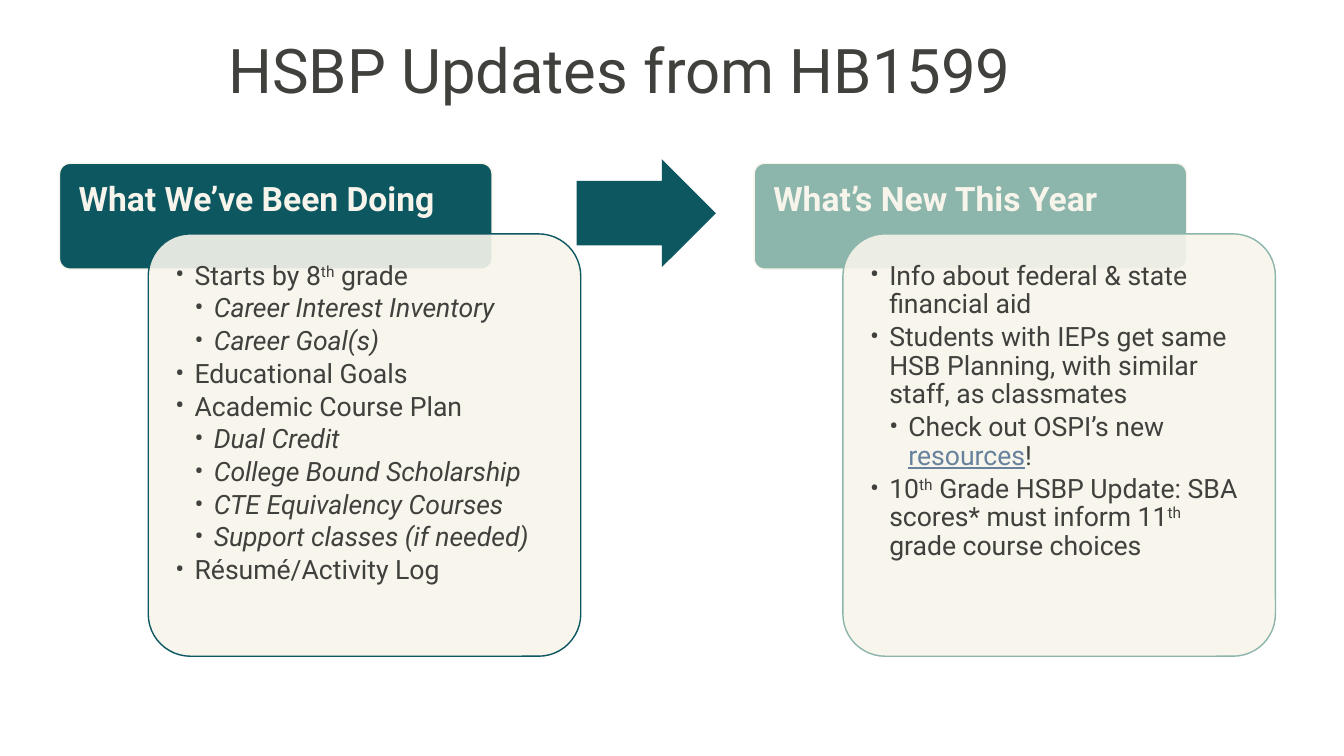
from dataclasses import dataclass

from lxml import etree
from pptx import Presentation
from pptx import util as u
from pptx.dml import color
from pptx.enum import shapes, text
from pptx.oxml import ns

FONT = "Roboto"
HUES = {"teal": "0D5761", "sage": "8CB5AB", "cream": "F7F5EB",
        "ink": "40403D", "link": "68829E"}
STEP = 0.19  # list indent per level


@dataclass
class Run:
    txt: str
    sup: bool = False
    link: bool = False


@dataclass
class Item:
    runs: list[Run]
    level: int = 1
    slant: bool = False


@dataclass
class Panel:
    left: float
    hue: str
    head: str
    head_id: int
    list_id: int
    items: list[Item]


def main_item(txt: str) -> Item:
    return Item([Run(txt)])


def sub_item(txt: str) -> Item:
    return Item([Run(txt)], 2, True)


TH = Run("th", sup=True)
PANELS = [
    Panel(0.59, "teal", "What We’ve Been Doing", 1, 2, [
        Item([Run("Starts by 8"), TH, Run(" grade")]),
        sub_item("Career Interest Inventory"),
        sub_item("Career Goal(s)"),
        main_item("Educational Goals"),
        main_item("Academic Course Plan"),
        sub_item("Dual Credit"),
        sub_item("College Bound Scholarship"),
        sub_item("CTE Equivalency Courses"),
        sub_item("Support classes (if needed)"),
        main_item("Résumé/Activity Log"),
    ]),
    Panel(7.48, "sage", "What’s New This Year", 3, 4, [
        main_item("Info about federal & state financial aid"),
        main_item("Students with IEPs get same HSB Planning, "
                  "with similar staff, as classmates"),
        Item([Run("Check out OSPI’s new "), Run("resources", link=True),
              Run("!")], 2),
        Item([Run("10"), TH,
              Run(" Grade HSBP Update: SBA scores* must inform 11"), TH,
              Run(" grade course choices")]),
    ]),
]


def rgb(hue: str) -> color.RGBColor:
    return color.RGBColor.from_string(HUES[hue])


def place(shape, left: float, top: float, width: float, height: float) -> None:
    shape.left, shape.top = u.Inches(left), u.Inches(top)
    shape.width, shape.height = u.Inches(width), u.Inches(height)


def add_block(slide, kind, box: tuple, fill: str, line: str | None, adj: list):
    shape = slide.shapes.add_shape(kind, *map(u.Inches, box))
    shape.shadow.inherit = False
    shape.fill.solid()
    shape.fill.fore_color.rgb = rgb(fill)
    if line:
        shape.line.color.rgb = rgb(line)
        shape.line.width = u.Pt(1)
    else:
        shape.line.fill.background()
    for i, val in enumerate(adj):
        shape.adjustments[i] = val
    return shape


def fade(shape, share: int) -> None:
    """Make the solid fill opaque only to the given percentage."""
    tint = shape.fill._xPr.find(".//" + ns.qn("a:srgbClr"))
    etree.SubElement(tint, ns.qn("a:alpha"), val=str(share * 1000))


def set_frame(holder, pads: tuple, anchor):
    frame = holder.text_frame
    frame.word_wrap = True
    frame.auto_size = text.MSO_AUTO_SIZE.NONE
    frame.vertical_anchor = anchor
    (frame.margin_left, frame.margin_top,
     frame.margin_right, frame.margin_bottom) = map(u.Inches, pads)
    return frame


def style(para, size: float, hue: str, after: float = 0,
          bold: bool = False, slant: bool = False) -> None:
    para.line_spacing = 0.9
    para.space_before, para.space_after = u.Pt(0), u.Pt(after)
    font = para.font
    font.name, font.size = FONT, u.Pt(size)
    font.bold, font.italic = bold, slant
    font.color.rgb = rgb(hue)


def add_bullet(para, level: int) -> None:
    para.level = level
    props = para._p.get_or_add_pPr()
    props.set("marL", str(u.Inches(STEP * level)))
    props.set("indent", str(u.Inches(-STEP)))
    etree.SubElement(props, ns.qn("a:buFont"), typeface=FONT)
    etree.SubElement(props, ns.qn("a:buChar"), char="•")


def fill_list(frame, items: list[Item]) -> None:
    for i, item in enumerate(items):
        para = frame.add_paragraph() if i else frame.paragraphs[0]
        add_bullet(para, item.level)
        style(para, 19, "ink", after=2.85, slant=item.slant)
        for part in item.runs:
            run = para.add_run()
            run.text = part.txt
            if part.sup:
                run._r.get_or_add_rPr().set("baseline", "30000")
            if part.link:
                run.font.underline = True
                run.font.color.rgb = rgb("link")


def lift(slide, idx: int):
    """Bring a placeholder in front of the blocks drawn so far."""
    holder = next(p for p in slide.placeholders
                  if p.placeholder_format.idx == idx)
    slide.shapes._spTree.append(holder._element)
    return holder


def add_panel(slide, panel: Panel) -> None:
    rounded = shapes.MSO_SHAPE.ROUNDED_RECTANGLE
    left = panel.left
    add_block(slide, rounded, (left, 1.62, 4.29, 1.05),
              panel.hue, "cream", [0.1])
    head = lift(slide, panel.head_id)
    place(head, left, 1.62, 4.29, 0.7)
    frame = set_frame(head, (0.19, 0.19, 0.19, 0.1), text.MSO_ANCHOR.TOP)
    frame.text = panel.head
    style(frame.paragraphs[0], 24, "cream", bold=True)

    card = add_block(slide, rounded, (left + 0.88, 2.32, 4.29, 4.19),
                     "cream", panel.hue, [0.1])
    fade(card, 90)
    body = lift(slide, panel.list_id)
    place(body, left + 1, 2.45, 4.04, 3.94)
    fill_list(set_frame(body, (0.15,) * 4, text.MSO_ANCHOR.TOP), panel.items)


def main() -> None:
    deck = Presentation()
    deck.slide_width, deck.slide_height = u.Inches(13.33), u.Inches(7.5)
    slide = deck.slides.add_slide(deck.slide_layouts.get_by_name("Comparison"))

    title = slide.shapes.title
    place(title, 0.4, 0.25, 11.5, 0.96)
    frame = set_frame(title, (0.1, 0.05, 0.1, 0.05), text.MSO_ANCHOR.MIDDLE)
    frame.text = "HSBP Updates from HB1599"
    frame.paragraphs[0].alignment = text.PP_ALIGN.CENTER
    style(frame.paragraphs[0], 44, "ink")

    for panel in PANELS:
        add_panel(slide, panel)
    add_block(slide, shapes.MSO_SHAPE.RIGHT_ARROW, (5.72, 1.58, 1.38, 1.07),
              "teal", None, [0.6, 0.5])
    deck.save("out.pptx")


if __name__ == "__main__":
    main()
